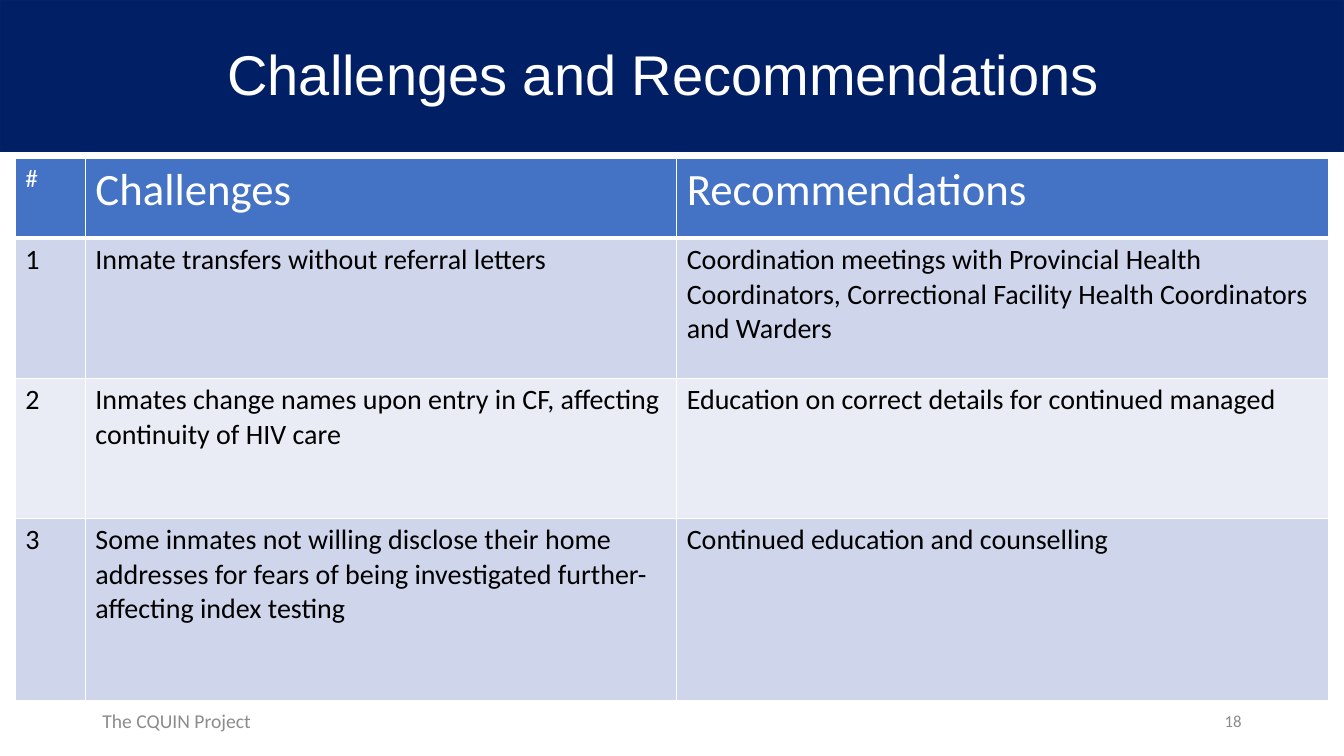
from lxml.etree import SubElement
from pptx import Presentation
from pptx.dml.color import RGBColor
from pptx.enum.shapes import MSO_SHAPE
from pptx.enum.text import MSO_ANCHOR, PP_ALIGN
from pptx.oxml.ns import qn
from pptx.util import Pt

# Content
TITLE = "Challenges and Recommendations "
FOOTER = "The CQUIN Project"
PAGE = "18"
ROWS = [
    ("#", "Challenges", "Recommendations"),
    ("1", "Inmate transfers without referral letters",
     "Coordination meetings with Provincial Health Coordinators, "
     "Correctional Facility Health Coordinators and Warders"),
    ("2", "Inmates change names upon entry in CF, affecting continuity of HIV care",
     "Education on correct details for continued managed"),
    ("3", "Some inmates not willing disclose their home addresses for fears of "
     "being investigated further- affecting index testing",
     "Continued education and counselling"),
]

# Layout, in points
WIDTH, HEIGHT = 960, 540
BAND = 108
LEFT, TOP = 11, 113
COLS = (50, 422.4, 465.6)
HEIGHTS = (57.2, 100, 100, 130)
FOOT = 500.4

THEME = {
    "head": "Arial", "body": "Calibri",
    "navy": "001F64", "edge": "022169", "blue": "4472C4",
    "bands": ("E9EBF5", "CFD5EA"),
    "white": "FFFFFF", "black": "000000", "gray": "8C8C8C",
    "title": 40, "header": 32, "mark": 18, "cell": 20, "foot": 14, "page": 12,
}


def color(name):
    return RGBColor.from_string(THEME.get(name, name))


def style(frame, size, tint, face="body", align=PP_ALIGN.LEFT):
    para = frame.paragraphs[0]
    para.alignment = align
    font = para.runs[0].font
    font.name, font.size, font.bold = THEME[face], Pt(THEME[size]), False
    font.color.rgb = color(tint)


def label(slide, box, text, *look):
    frame = slide.shapes.add_textbox(*map(Pt, box)).text_frame
    frame.word_wrap = True
    frame.vertical_anchor = MSO_ANCHOR.MIDDLE
    frame.text = text
    style(frame, *look)
    return frame


def border(cell, head):
    props = cell._tc.get_or_add_tcPr()
    for side in "LRTB":
        wide = 3 if head and side == "B" else 1
        line = SubElement(props, qn("a:ln" + side), w=str(Pt(wide)))
        fill = SubElement(line, qn("a:solidFill"))
        SubElement(fill, qn("a:srgbClr"), val=THEME["white"])


def grid(slide):
    box = map(Pt, (LEFT, TOP, sum(COLS), sum(HEIGHTS)))
    table = slide.shapes.add_table(len(ROWS), len(COLS), *box).table
    for col, wide in zip(table.columns, COLS):
        col.width = Pt(wide)
    for r, (row, tall) in enumerate(zip(ROWS, HEIGHTS)):
        table.rows[r].height = Pt(tall)
        head = r == 0
        for c, text in enumerate(row):
            cell = table.cell(r, c)
            border(cell, head)
            cell.fill.solid()
            cell.fill.fore_color.rgb = color("blue" if head else THEME["bands"][r % 2])
            cell.text_frame.text = text
            size = ("header" if c else "mark") if head else "cell"
            style(cell.text_frame, size, "white" if head else "black")


def main():
    deck = Presentation()
    deck.slide_width, deck.slide_height = Pt(WIDTH), Pt(HEIGHT)
    slide = deck.slides.add_slide(deck.slide_layouts[6])

    # Title band
    band = slide.shapes.add_shape(MSO_SHAPE.RECTANGLE, 0, 0, Pt(WIDTH), Pt(BAND))
    band.shadow.inherit = False
    band.fill.solid()
    band.fill.fore_color.rgb = color("navy")
    band.line.color.rgb = color("edge")
    band.line.width = Pt(1)

    # Footer, table, page number and title
    label(slide, (66, FOOT, 216, 28.8), FOOTER, "foot", "gray")
    grid(slide)
    label(slide, (678, FOOT, 216, 28.8), PAGE, "page", "gray", "body", PP_ALIGN.RIGHT)
    title = label(slide, (65, 25, 828, 60), TITLE,
                  "title", "white", "head", PP_ALIGN.CENTER)
    title.paragraphs[0].line_spacing = 0.9

    deck.save("out.pptx")


if __name__ == "__main__":
    main()
